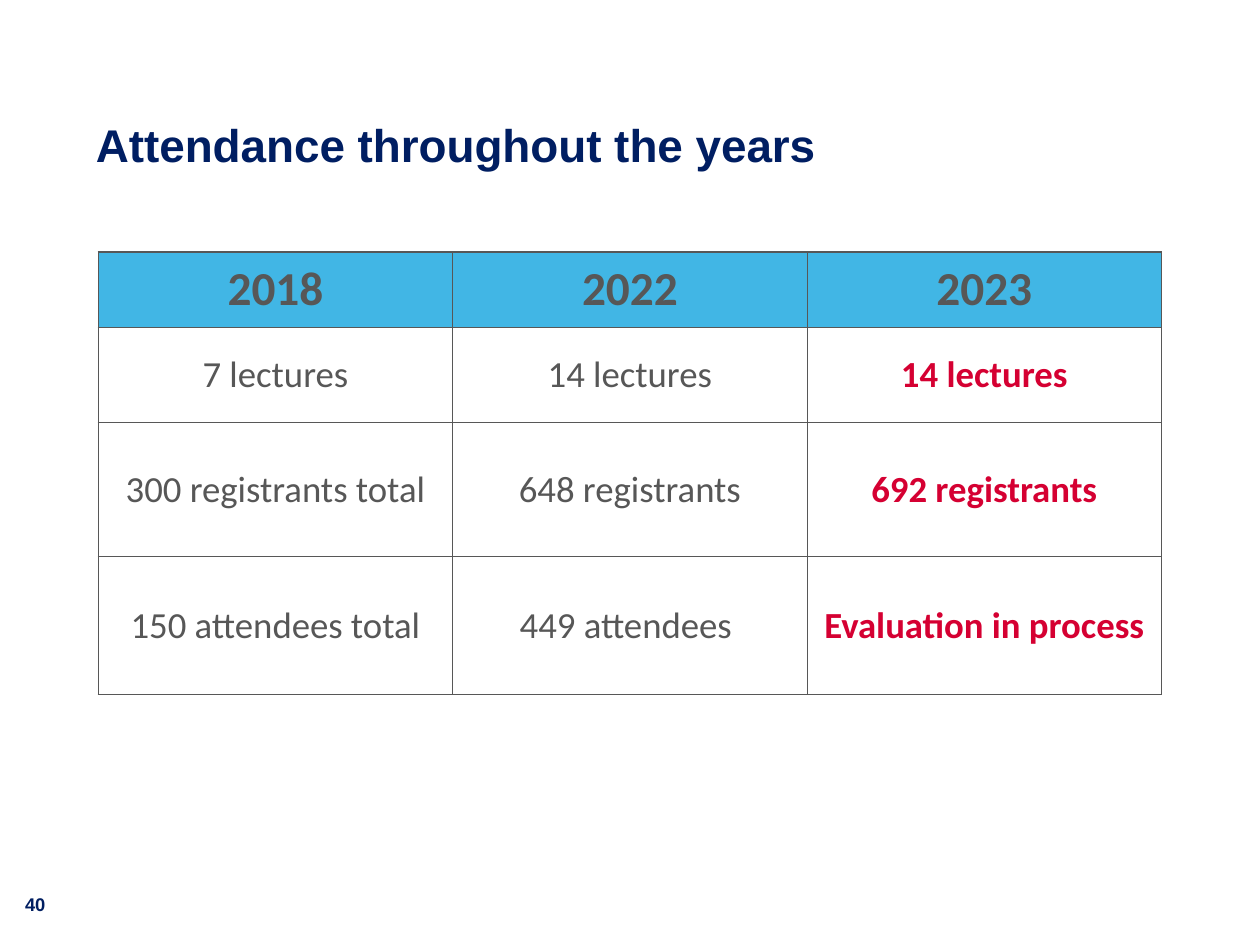
"""Build the slide that compares attendance across three years in a table."""
from dataclasses import dataclass

from lxml.etree import SubElement
from pptx import Presentation
from pptx.dml.color import RGBColor
from pptx.enum.text import MSO_ANCHOR as Anchor, MSO_AUTO_SIZE as AutoSize, PP_ALIGN as Align
from pptx.oxml.ns import qn
from pptx.util import Inches, Pt


@dataclass(frozen=True)
class TextStyle:
    font: str
    size: float
    color: str
    bold: bool = False


@dataclass(frozen=True)
class Theme:
    title: TextStyle = TextStyle("Arial", 26.2, "001E62", True)
    number: TextStyle = TextStyle("Arial", 10.5, "001E61", True)
    heading: TextStyle = TextStyle("Calibri", 27, "575757", True)
    body: TextStyle = TextStyle("Calibri", 21, "575757")
    latest: TextStyle = TextStyle("Calibri", 21, "D50032", True)
    header_fill: str = "41B6E5"
    border: str = "575757"
    border_width: float = 0.75
    cell_inset: float = 0.07


@dataclass(frozen=True)
class Year:
    heading: str
    entries: tuple[str, ...]
    style: TextStyle


THEME = Theme()
WIDTH, HEIGHT = 10, 7.5
TABLE_LEFT, TABLE_TOP, TABLE_WIDTH = 0.78, 2, 8.44
ROW_HEIGHTS = (0.6, 0.75, 1.07, 1.09)
YEARS = (
    Year("2018", ("7 lectures", "300 registrants total", "150 attendees total"), THEME.body),
    Year("2022", ("14 lectures", "648 registrants", "449 attendees "), THEME.body),
    Year("2023", ("14 lectures", "692 registrants", "Evaluation in process"), THEME.latest),
)


def write(text_frame, text: str, style: TextStyle, align: Align = Align.LEFT) -> None:
    text_frame.text = text
    paragraph = text_frame.paragraphs[0]
    paragraph.alignment = align
    font = paragraph.runs[0].font
    font.name, font.size, font.bold = style.font, Pt(style.size), style.bold
    font.color.rgb = RGBColor.from_string(style.color)


def place(shape, left: float, top: float, width: float, height: float) -> None:
    shape.left, shape.top = Inches(left), Inches(top)
    shape.width, shape.height = Inches(width), Inches(height)


def draw_borders(cell) -> None:
    properties = cell._tc.get_or_add_tcPr()
    for side in ("a:lnL", "a:lnR", "a:lnT", "a:lnB"):
        line = SubElement(properties, qn(side), w=str(Pt(THEME.border_width)))
        fill = SubElement(line, qn("a:solidFill"))
        SubElement(fill, qn("a:srgbClr"), val=THEME.border)


def draw_cell(cell, text: str, style: TextStyle, is_header: bool) -> None:
    write(cell.text_frame, text, style, Align.CENTER)
    cell.vertical_anchor = Anchor.TOP if is_header else Anchor.MIDDLE
    inset = Inches(THEME.cell_inset)
    cell.margin_left = cell.margin_right = cell.margin_top = cell.margin_bottom = inset
    draw_borders(cell)
    if is_header:
        cell.fill.solid()
        cell.fill.fore_color.rgb = RGBColor.from_string(THEME.header_fill)
    else:
        cell.fill.background()


def draw_table(slide) -> None:
    table = slide.shapes.add_table(
        len(ROW_HEIGHTS), len(YEARS), Inches(TABLE_LEFT), Inches(TABLE_TOP),
        Inches(TABLE_WIDTH), Inches(sum(ROW_HEIGHTS))).table
    table.horz_banding = False
    for row, height in zip(table.rows, ROW_HEIGHTS):
        row.height = Inches(height)
    for column, year in enumerate(YEARS):
        draw_cell(table.cell(0, column), year.heading, THEME.heading, True)
        for row, entry in enumerate(year.entries, start=1):
            draw_cell(table.cell(row, column), entry, year.style, False)


def draw_title(slide, text: str) -> None:
    title = slide.shapes.title
    place(title, 0.69, 0.79, WIDTH - 2 * 0.69, 0.77)
    frame = title.text_frame
    write(frame, text, THEME.title)
    frame.paragraphs[0].line_spacing = 0.9
    frame.vertical_anchor = Anchor.MIDDLE
    frame.auto_size = AutoSize.NONE
    frame.margin_left = frame.margin_right = Inches(0.07)
    frame.margin_top = frame.margin_bottom = Inches(0.04)


def draw_number(slide, text: str) -> None:
    box = slide.shapes.add_textbox(0, 0, 0, 0)
    place(box, 0.1, 7.04, 0.49, 0.28)
    box.text_frame.word_wrap = True
    box.text_frame.auto_size = AutoSize.SHAPE_TO_FIT_TEXT
    write(box.text_frame, text, THEME.number)


def main() -> None:
    presentation = Presentation()
    presentation.slide_width, presentation.slide_height = Inches(WIDTH), Inches(HEIGHT)
    slide = presentation.slides.add_slide(presentation.slide_layouts.get_by_name("Title Only"))
    draw_number(slide, "40")
    draw_table(slide)
    draw_title(slide, "Attendance throughout the years")
    presentation.save("out.pptx")


if __name__ == "__main__":
    main()
